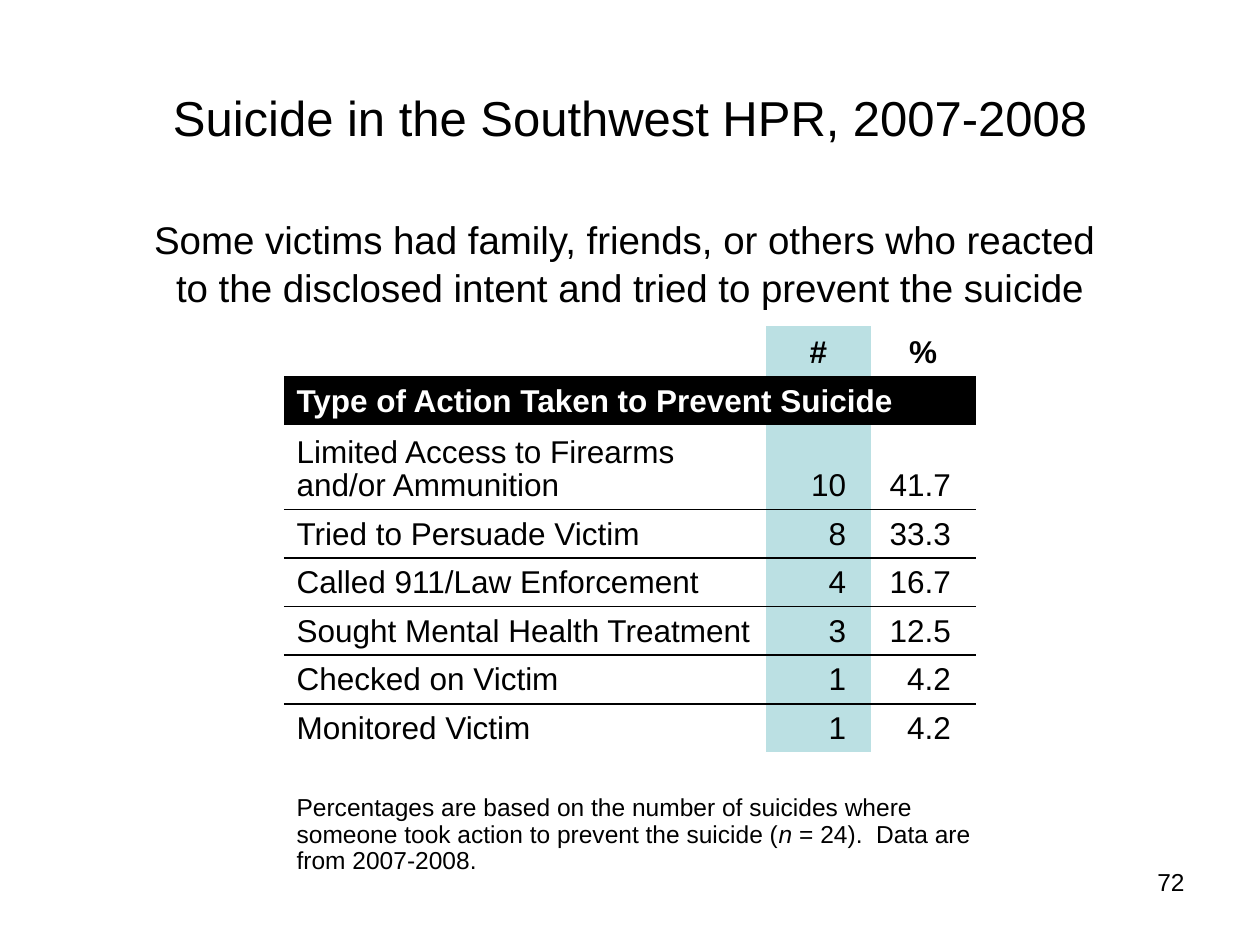
import lxml.etree
import pptx
import pptx.dml.color
import pptx.enum.text
import pptx.oxml.ns
import pptx.util

PX = 914400 / 126
BLACK = pptx.dml.color.RGBColor(0, 0, 0)
WHITE = pptx.dml.color.RGBColor(255, 255, 255)
TEAL = pptx.dml.color.RGBColor(0xBB, 0xE0, 0xE3)
ALIGN = pptx.enum.text.PP_ALIGN
ANCHOR = pptx.enum.text.MSO_ANCHOR

COLS = [482, 105, 105]
HEADINGS = ["", "#", "%"]
BANNER = "Type of Action Taken to Prevent Suicide"
ACTIONS = [
    ("Limited Access to Firearms and/or Ammunition", "10", "41.7"),
    ("Tried to Persuade Victim", "8", "33.3"),
    ("Called 911/Law Enforcement", "4", "16.7"),
    ("Sought Mental Health Treatment", "3", "12.5"),
    ("Checked on Victim", "1", "4.2"),
    ("Monitored Victim", "1", "4.2"),
]
ROWS = [47, 47, 79] + [46] * 5 + [32, 91]
NOTE = [
    ("Percentages are based on the number of suicides where someone took action "
     "to prevent the suicide (", {}),
    ("n ", {"italic": True}),
    ("= 24).  Data are from 2007-2008.", {}),
]


def px(n):
    """Turn whole px into EMU."""
    return pptx.util.Emu(round(n * PX))


def add_run(p, text, size, color=BLACK, **extra):
    """Add a formatted run to a paragraph."""
    r = p.add_run()
    r.text = text
    r.font.color.rgb = color
    fmt = {"name": "Arial", "size": pptx.util.Pt(size), **extra}
    for key, value in fmt.items():
        setattr(r.font, key, value)


def add_text(s, box, lines, size, align, anchor=ANCHOR.TOP, before=0):
    """Place a wrapped text box with one paragraph per line."""
    tf = s.shapes.add_textbox(*map(px, box)).text_frame
    tf.word_wrap = True
    tf.vertical_anchor = anchor
    for i, line in enumerate(lines):
        p = tf.add_paragraph() if i else tf.paragraphs[0]
        p.alignment = align
        p.space_before = pptx.util.Pt(before)
        add_run(p, line, size)


def set_borders(cell, top, bottom):
    """Draw the chosen horizontal borders and clear the others."""
    tc_pr = cell._tc.get_or_add_tcPr()
    qn = pptx.oxml.ns.qn
    for tag, shown in (("a:lnL", False), ("a:lnR", False), ("a:lnT", top), ("a:lnB", bottom)):
        ln = lxml.etree.SubElement(tc_pr, qn(tag), w="12700" if shown else "0")
        if shown:
            fill = lxml.etree.SubElement(ln, qn("a:solidFill"))
            lxml.etree.SubElement(fill, qn("a:srgbClr"), val=str(BLACK))
        else:
            lxml.etree.SubElement(ln, qn("a:noFill"))


def fill_cell(cell, runs, size=18, align=ALIGN.LEFT, color=BLACK, fill=None, right=13, **extra):
    """Write runs into a cell and set its fill and margins."""
    cell.vertical_anchor = ANCHOR.BOTTOM
    cell.margin_right = px(right)
    if fill is None:
        cell.fill.background()
    else:
        cell.fill.solid()
        cell.fill.fore_color.rgb = fill
    p = cell.text_frame.paragraphs[0]
    p.alignment = align
    p.line_spacing = 0.95
    for text, fmt in runs:
        add_run(p, text, size, color, **{**extra, **fmt})


def add_actions_table(s, left, top):
    """Build the table of actions with its banner and footnote."""
    box = (left, top, sum(COLS), sum(ROWS))
    table = s.shapes.add_table(len(ROWS), len(COLS), *map(px, box)).table
    table.first_row = table.horz_banding = False
    for col, width in zip(table.columns, COLS):
        col.width = px(width)
    for row, height in zip(table.rows, ROWS):
        row.height = px(height)
    first, last = 2, 1 + len(ACTIONS)
    spacer, note = last + 1, last + 2
    for i in range(len(ROWS)):
        for j in range(len(COLS)):
            set_borders(table.cell(i, j), first < i <= last, first <= i < last)
    for j, text in enumerate(HEADINGS):
        runs = [(text, {})] if text else []
        fill_cell(table.cell(0, j), runs, align=ALIGN.CENTER,
                  fill=TEAL if j == 1 else None, bold=True)
    for i in (1, note):
        table.cell(i, 0).merge(table.cell(i, 2))
    fill_cell(table.cell(1, 0), [(BANNER, {})], color=WHITE, fill=BLACK, right=0, bold=True)
    for i, values in enumerate(ACTIONS, first):
        for j, text in enumerate(values):
            fill_cell(table.cell(i, j), [(text, {})],
                      align=ALIGN.RIGHT if j else ALIGN.LEFT,
                      fill=TEAL if j == 1 else None, right=25 if j else 13)
    for j in range(len(COLS)):
        cell = table.cell(spacer, j)
        fill_cell(cell, [])
        lxml.etree.SubElement(cell.text_frame.paragraphs[0]._p,
                              pptx.oxml.ns.qn("a:endParaRPr"), sz="800")
    fill_cell(table.cell(note, 0), NOTE, size=14, right=0)


def main():
    """Build and save the slide."""
    prs = pptx.Presentation()
    prs.slide_width, prs.slide_height = px(1260), px(945)
    s = prs.slides.add_slide(prs.slide_layouts[6])
    add_text(s, (903, 861, 294, 66), ["72"], 14, ALIGN.RIGHT)
    add_text(s, (63, 38, 1134, 158), ["Suicide in the Southwest HPR, 2007-2008"],
             28, ALIGN.CENTER, ANCHOR.MIDDLE)
    add_actions_table(s, 284, 326)
    add_text(s, (105, 210, 1050, 105),
             ["Some victims had family, friends, or others who reacted ",
              "to the disclosed intent and tried to prevent the suicide"],
             22, ALIGN.CENTER, before=1)
    prs.save("out.pptx")


if __name__ == "__main__":
    main()
